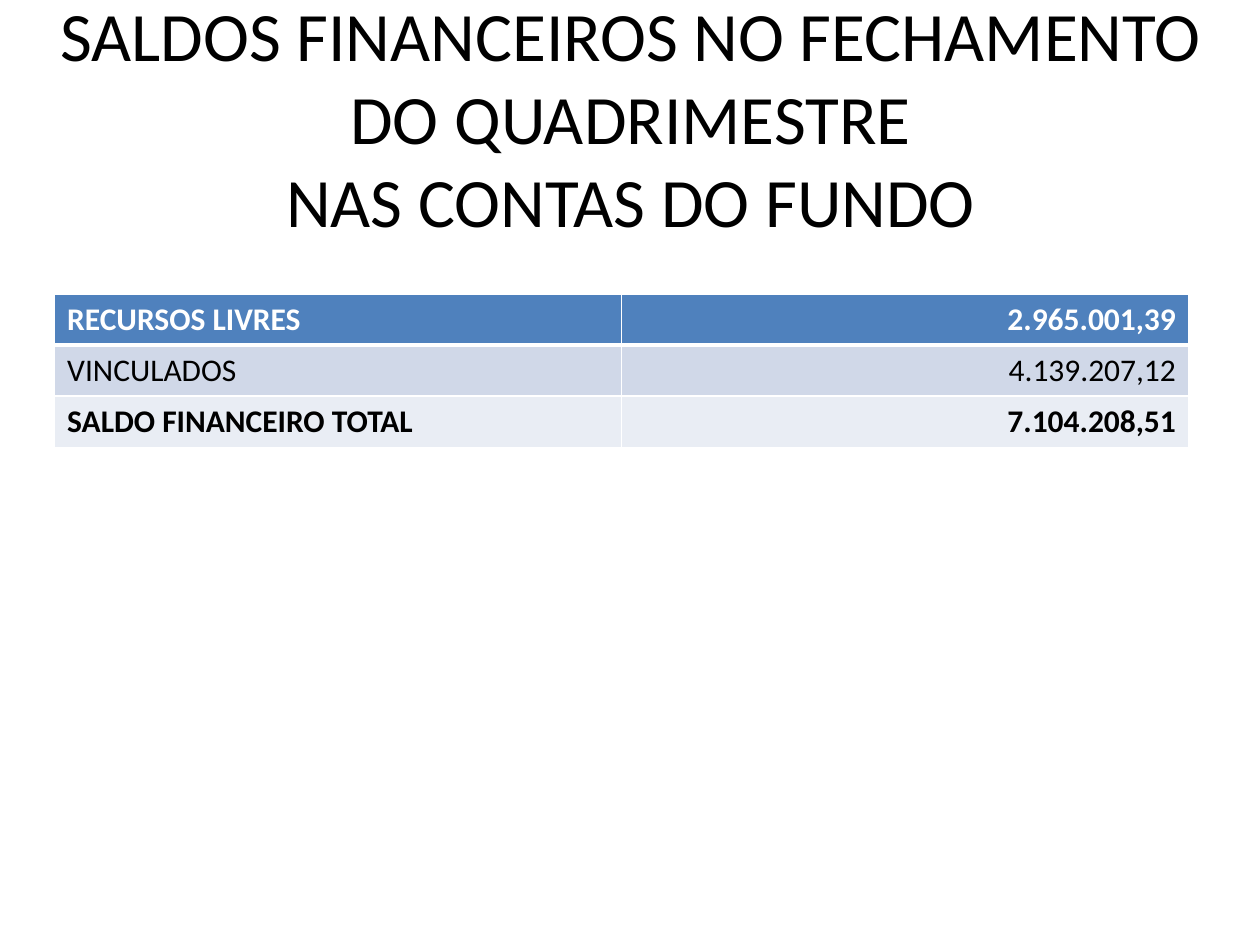
from lxml.etree import SubElement
from pptx import Presentation
from pptx.dml.color import RGBColor
from pptx.enum.text import MSO_ANCHOR, PP_ALIGN
from pptx.oxml.ns import qn
from pptx.util import Pt

BLACK = RGBColor(0x00, 0x00, 0x00)
WHITE = RGBColor(0xFF, 0xFF, 0xFF)
BLUE = RGBColor(0x4F, 0x81, 0xBD)
MID = RGBColor(0xD0, 0xD8, 0xE8)
PALE = RGBColor(0xE9, 0xED, 0xF4)
FONT = "Calibri"

TITLE = ["SALDOS FINANCEIROS NO FECHAMENTO DO QUADRIMESTRE",
         "NAS CONTAS DO FUNDO"]
# Label, value, fill, text colour, bold
ROWS = [
    ("RECURSOS LIVRES", "2.965.001,39", BLUE, WHITE, True),
    ("VINCULADOS", "4.139.207,12", MID, BLACK, False),
    ("SALDO FINANCEIRO TOTAL", "7.104.208,51", PALE, BLACK, True),
]


def add_run(para, text, size, color, bold=False):
    run = para.add_run()
    run.text = text
    font = run.font
    font.name, font.size, font.bold = FONT, Pt(size), bold
    font.color.rgb = color


def add_title(slide, lines):
    box = slide.shapes.add_textbox(Pt(14.4), Pt(21.6), Pt(692), Pt(90))
    frame = box.text_frame
    frame.word_wrap = True
    frame.vertical_anchor = MSO_ANCHOR.MIDDLE
    para = frame.paragraphs[0]
    para.alignment = PP_ALIGN.CENTER
    for i, line in enumerate(lines):
        if i:
            para.add_line_break()
        add_run(para, line, 39.6, BLACK)


def set_edges(cell, top, bottom):
    props = cell._tc.get_or_add_tcPr()
    edges = (("L", 1), ("R", 1), ("T", top), ("B", bottom))
    for i, (side, width) in enumerate(edges):
        # Edges must come before the fill
        line = SubElement(props, qn(f"a:ln{side}"), w=str(Pt(width)))
        props.insert(i, line)
        fill = SubElement(line, qn("a:solidFill"))
        SubElement(fill, qn("a:srgbClr"), val=str(WHITE))


def add_grid(slide, rows):
    frame = slide.shapes.add_table(len(rows), 2, Pt(31.2), Pt(168),
                                   Pt(648), Pt(29.2 * len(rows)))
    table = frame.table
    for r, (label, value, fill, color, bold) in enumerate(rows):
        for c, text in enumerate((label, value)):
            cell = table.cell(r, c)
            cell.fill.solid()
            cell.fill.fore_color.rgb = fill
            set_edges(cell, 3 if r == 1 else 1, 3 if r == 0 else 1)
            para = cell.text_frame.paragraphs[0]
            para.alignment = PP_ALIGN.RIGHT if c else PP_ALIGN.LEFT
            add_run(para, text, 18, color, bold)


def main():
    deck = Presentation()
    deck.slide_width, deck.slide_height = Pt(720), Pt(540)
    slide = deck.slides.add_slide(deck.slide_layouts[6])
    # Heading
    add_title(slide, TITLE)
    # Balances
    add_grid(slide, ROWS)
    deck.save("out.pptx")


if __name__ == "__main__":
    main()
